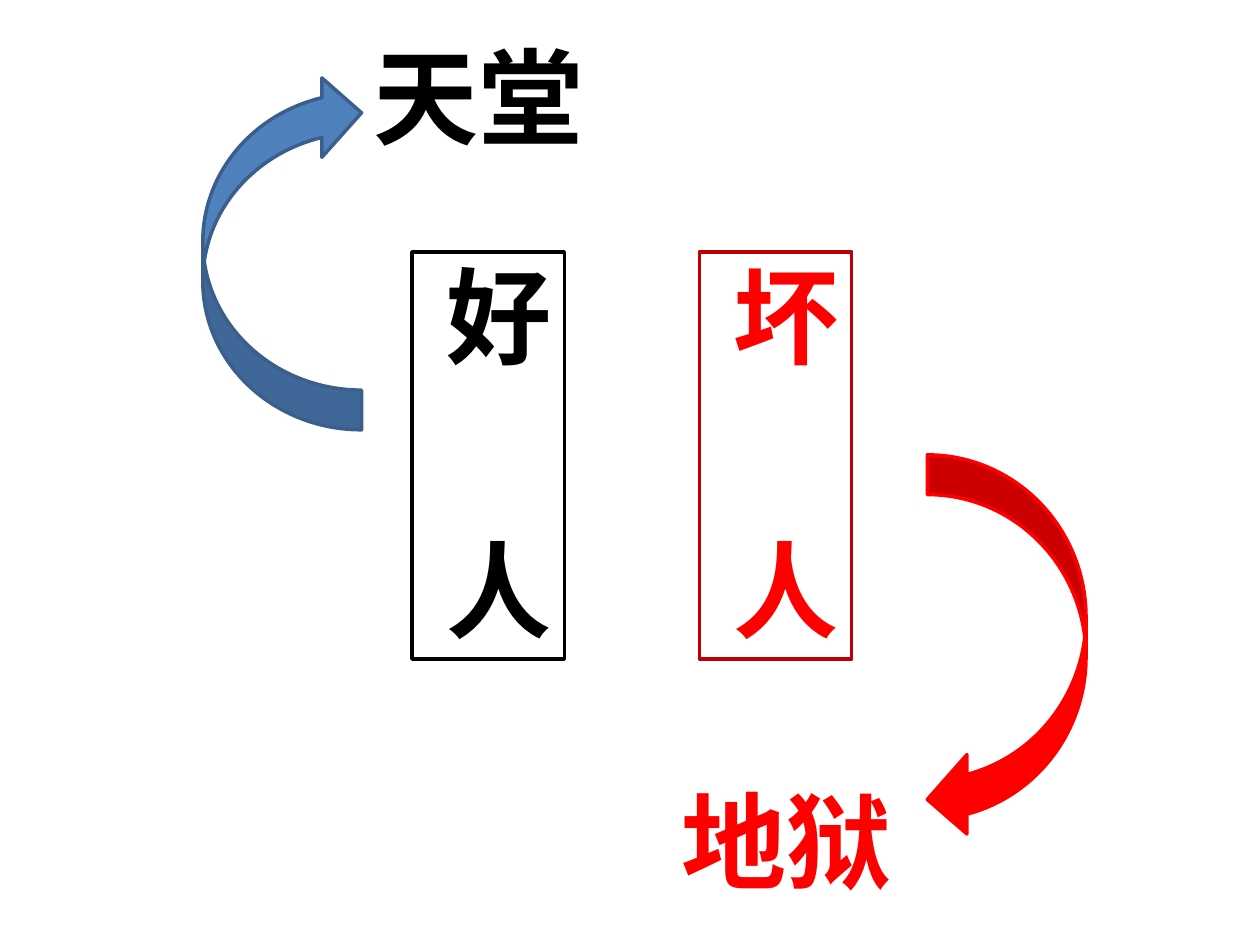
from lxml import etree
from pptx import Presentation
from pptx import util as u
from pptx.dml.color import RGBColor
from pptx.enum import shapes, text
from pptx.oxml.ns import qn

Pt = u.Pt
COLORS = {"black": "000000", "red": "FF0000", "dark_red": "C00000",
          "blue": "4F81BD", "dark_blue": "3A5F8C"}


def rgb(name):
    return RGBColor.from_string(COLORS[name])


def write(sp, words, color):
    tf = sp.text_frame
    tf.word_wrap = True
    tf.auto_size = text.MSO_AUTO_SIZE.SHAPE_TO_FIT_TEXT
    tf.vertical_anchor = text.MSO_ANCHOR.TOP
    p = tf.paragraphs[0]
    p.alignment = text.PP_ALIGN.LEFT
    r = p.add_run()
    r.text = words
    r.font.name = "Calibri"
    r.font.size = Pt(60)
    r.font.bold = True
    r.font.color.rgb = rgb(color)
    return tf


prs = Presentation()
prs.slide_width, prs.slide_height = Pt(720), Pt(540)
s = prs.slides.add_slide(prs.slide_layouts[6])

people = [("好\t人", 235.4, "black", "black"),
          ("坏\t人", 399.6, "red", "dark_red")]
for words, left, color, line in people:
    sp = s.shapes.add_shape(shapes.MSO_SHAPE.RECTANGLE,
                            Pt(left), Pt(144), Pt(87.1), Pt(232.6))
    sp.shadow.inherit = False
    sp.fill.background()
    sp.line.color.rgb = rgb(line)
    sp.line.width = Pt(2)
    tf = write(sp, words, color)
    tf._txBody.bodyPr.set("vert", "eaVert")
    tabs = etree.SubElement(tf.paragraphs[0]._p.get_or_add_pPr(), qn("a:tabLst"))
    etree.SubElement(tabs, qn("a:tab"), pos=str(Pt(156.6)), algn="l")

fates = [("天堂", 206.6, 15.1, "black", 115.9, 41.8, 203.8, 180, "blue", "dark_blue"),
         ("地狱", 382.3, 439.9, "red", 529.9, 259.9, 219.6, 0, "red", "red")]
for words, left, top, color, x, y, height, turn, fill, line in fates:
    group = s.shapes.add_group_shape()
    arrow = group.shapes.add_shape(shapes.MSO_SHAPE.CURVED_LEFT_ARROW,
                                   Pt(x), Pt(y), Pt(90.7), Pt(height))
    arrow.rotation = turn
    arrow.shadow.inherit = False
    arrow.fill.solid()
    arrow.fill.fore_color.rgb = rgb(fill)
    arrow.line.color.rgb = rgb(line)
    arrow.line.width = Pt(2)
    write(group.shapes.add_textbox(Pt(left), Pt(top), Pt(136.1), Pt(79.9)), words, color)

prs.save("out.pptx")
